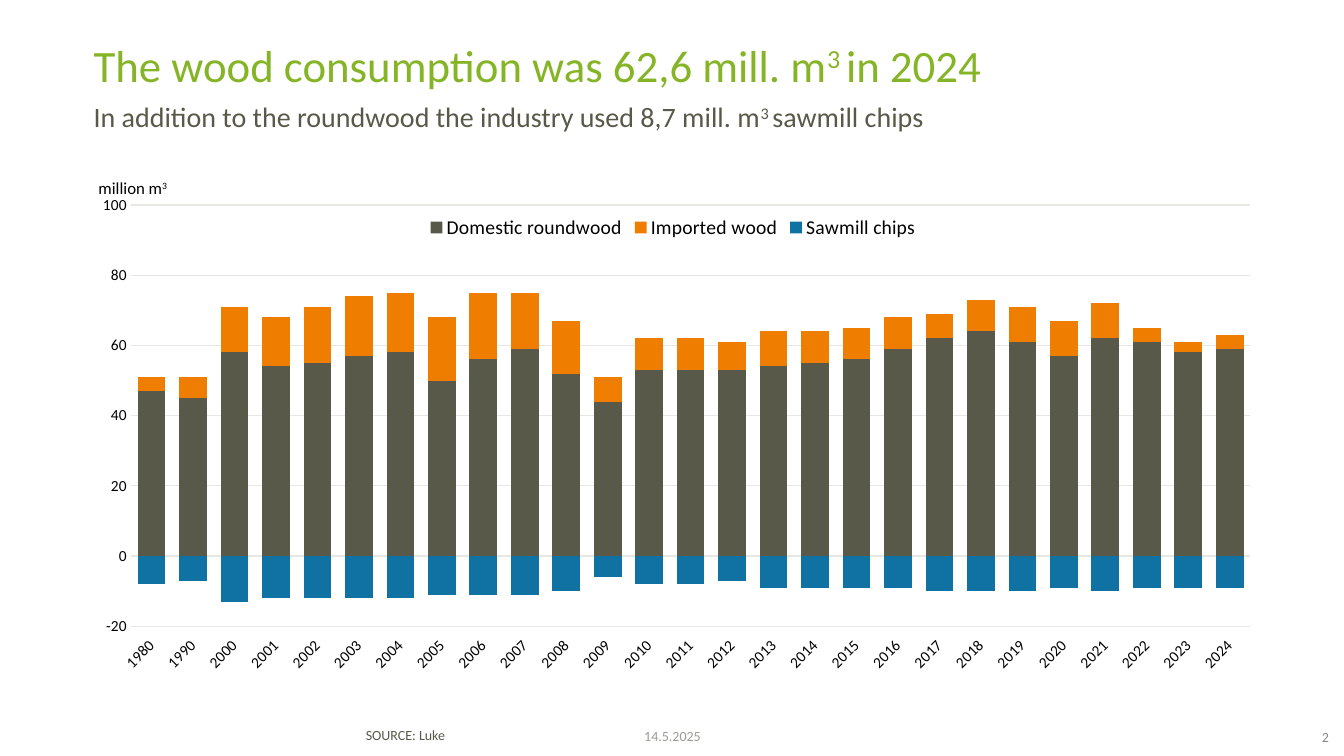
from lxml import etree
from pptx import Presentation
from pptx.chart.data import CategoryChartData
from pptx.dml.color import RGBColor
from pptx.enum.chart import XL_CHART_TYPE, XL_LEGEND_POSITION, XL_TICK_LABEL_POSITION, XL_TICK_MARK
from pptx.enum.text import MSO_ANCHOR, PP_ALIGN
from pptx.oxml import parse_xml
from pptx.oxml.ns import nsdecls, qn
from pptx.util import Inches, Pt

FONT = "Calibri"
GREEN, GREY, ORANGE, BLUE = "85B526", "59594A", "EF7D00", "0F72A2"
BLACK, GRID = "000000", "E7E7E3"
MARGIN, CONTENT_WIDTH = 0.83, 11.69

YEARS = ["1980", "1990"] + [str(year) for year in range(2000, 2025)]
CONSUMPTION = [
    ("Domestic roundwood", GREY,
     [47, 45, 58, 54, 55, 57, 58, 50, 56, 59, 52, 44, 53, 53, 53, 54, 55, 56,
      59, 62, 64, 61, 57, 62, 61, 58, 59]),
    ("Imported wood", ORANGE,
     [4, 6, 13, 14, 16, 17, 17, 18, 19, 16, 15, 7, 9, 9, 8, 10, 9, 9,
      9, 7, 9, 10, 10, 10, 4, 3, 4]),
    ("Sawmill chips", BLUE,
     [-8, -7, -13, -12, -12, -12, -12, -11, -11, -11, -10, -6, -8, -8, -7, -9,
      -9, -9, -9, -10, -10, -10, -9, -10, -9, -9, -9]),
]


def rgb(color):
    return RGBColor.from_string(color)


def style_font(font, size, color):
    font.name = FONT
    font.size = Pt(size)
    font.bold = False
    font.color.rgb = rgb(color)


def add_runs(paragraph, parts, size, color):
    """Add the parts as runs; every second part is superscript."""
    for index, text in enumerate(parts):
        run = paragraph.add_run()
        run.text = text
        style_font(run.font, size, color)
        if index % 2:
            run._r.get_or_add_rPr().set("baseline", "30000")


def add_text(slide, box, lines, align=PP_ALIGN.LEFT, anchor=MSO_ANCHOR.TOP,
             spacing=None, gap=0, insets=(0.1, 0.05, 0.1, 0.05)):
    """Each line is (parts, size, color); gap is the space between lines in points."""
    frame = slide.shapes.add_textbox(*map(Inches, box)).text_frame
    frame.word_wrap = True
    frame.vertical_anchor = anchor
    (frame.margin_left, frame.margin_top,
     frame.margin_right, frame.margin_bottom) = map(Inches, insets)
    for index, line in enumerate(lines):
        paragraph = frame.add_paragraph() if index else frame.paragraphs[0]
        paragraph.alignment = align
        if spacing:
            paragraph.line_spacing = spacing
        if index:
            paragraph.space_before = Pt(gap)
        add_runs(paragraph, *line)


def set_layout(element, position, **share):
    """Place a chart part by shares of the chart's size."""
    for old in element.findall(qn("c:layout")):
        element.remove(old)
    layout = parse_xml(f"<c:layout {nsdecls('c')}><c:manualLayout/></c:layout>")
    settings = {"xMode": "edge", "yMode": "edge", **share}
    if "w" in share:
        settings = {"layoutTarget": "inner", **settings}
    for tag, value in settings.items():
        etree.SubElement(layout[0], qn(f"c:{tag}")).set("val", str(value))
    element.insert(position, layout)


def style_axes(chart):
    years, volume = chart.category_axis, chart.value_axis
    for axis in (years, volume):
        axis.major_tick_mark = axis.minor_tick_mark = XL_TICK_MARK.NONE
        style_font(axis.tick_labels.font, 11, BLACK)
    years.tick_label_position = XL_TICK_LABEL_POSITION.LOW
    years._element.find(qn("c:txPr")).find(qn("a:bodyPr")).set("rot", "-2700000")
    volume.minimum_scale, volume.maximum_scale, volume.major_unit = -20, 100, 20
    volume.tick_labels.number_format = "#,##0"
    volume.tick_labels.number_format_is_linked = False
    volume.format.line.fill.background()
    for line in (years.format.line, volume.major_gridlines.format.line):
        line.color.rgb = rgb(GRID)
        line.width = Pt(0.75)


def add_consumption_chart(slide, box):
    data = CategoryChartData(number_format="#,##0")
    data.categories = YEARS
    for name, _, volumes in CONSUMPTION:
        data.add_series(name, volumes)
    chart = slide.shapes.add_chart(
        XL_CHART_TYPE.COLUMN_STACKED, *map(Inches, box), data).chart
    style_font(chart.font, 10, GREY)
    style_axes(chart)

    plot = chart.plots[0]
    plot.gap_width, plot.overlap = 50, 100
    plot.vary_by_categories = False
    for series, (_, color, _) in zip(plot.series, CONSUMPTION):
        series.invert_if_negative = False
        series.format.fill.solid()
        series.format.fill.fore_color.rgb = rgb(color)

    chart.has_legend = True
    chart.legend.position = XL_LEGEND_POSITION.TOP
    chart.legend.include_in_layout = False
    style_font(chart.legend.font, 14, BLACK)

    unit = chart.chart_title
    add_runs(unit.text_frame.paragraphs[0], ["million m", "3"], 12, BLACK)
    set_layout(unit._element, 1, x=0.01, y=0.03)
    set_layout(chart._chartSpace.chart.plotArea, 0, x=0.04, y=0.09, w=0.95, h=0.81)


def main():
    deck = Presentation()
    deck.slide_width, deck.slide_height = Inches(13.33), Inches(7.5)
    slide = deck.slides.add_slide(deck.slide_layouts[6])

    add_text(slide, (MARGIN, 0.39, CONTENT_WIDTH, 0.98), [
        (["The wood consumption was 62,6 mill. m", "3 ", "in 2024"], 32, GREEN),
        (["In addition to the roundwood the industry used 8,7 mill. m", "3 ",
          "sawmill chips"], 20, GREY),
    ], anchor=MSO_ANCHOR.BOTTOM, spacing=0.8, gap=11)
    add_consumption_chart(slide, (MARGIN, 1.57, CONTENT_WIDTH, 5.16))

    add_text(slide, (3.53, 7.18, 7.18, 0.27), [(["SOURCE: Luke"], 10, "58594A")],
             spacing=0.85)
    add_text(slide, (5.17, 7.15, 3, 0.31), [(["14.5.2025"], 10, "9B9B96")],
             align=PP_ALIGN.CENTER, anchor=MSO_ANCHOR.MIDDLE)
    add_text(slide, (12.65, 7.24, 0.53, 0.19), [(["2"], 10, "878787")],
             align=PP_ALIGN.RIGHT, anchor=MSO_ANCHOR.MIDDLE, insets=(0, 0, 0, 0.04))
    deck.save("out.pptx")


if __name__ == "__main__":
    main()
